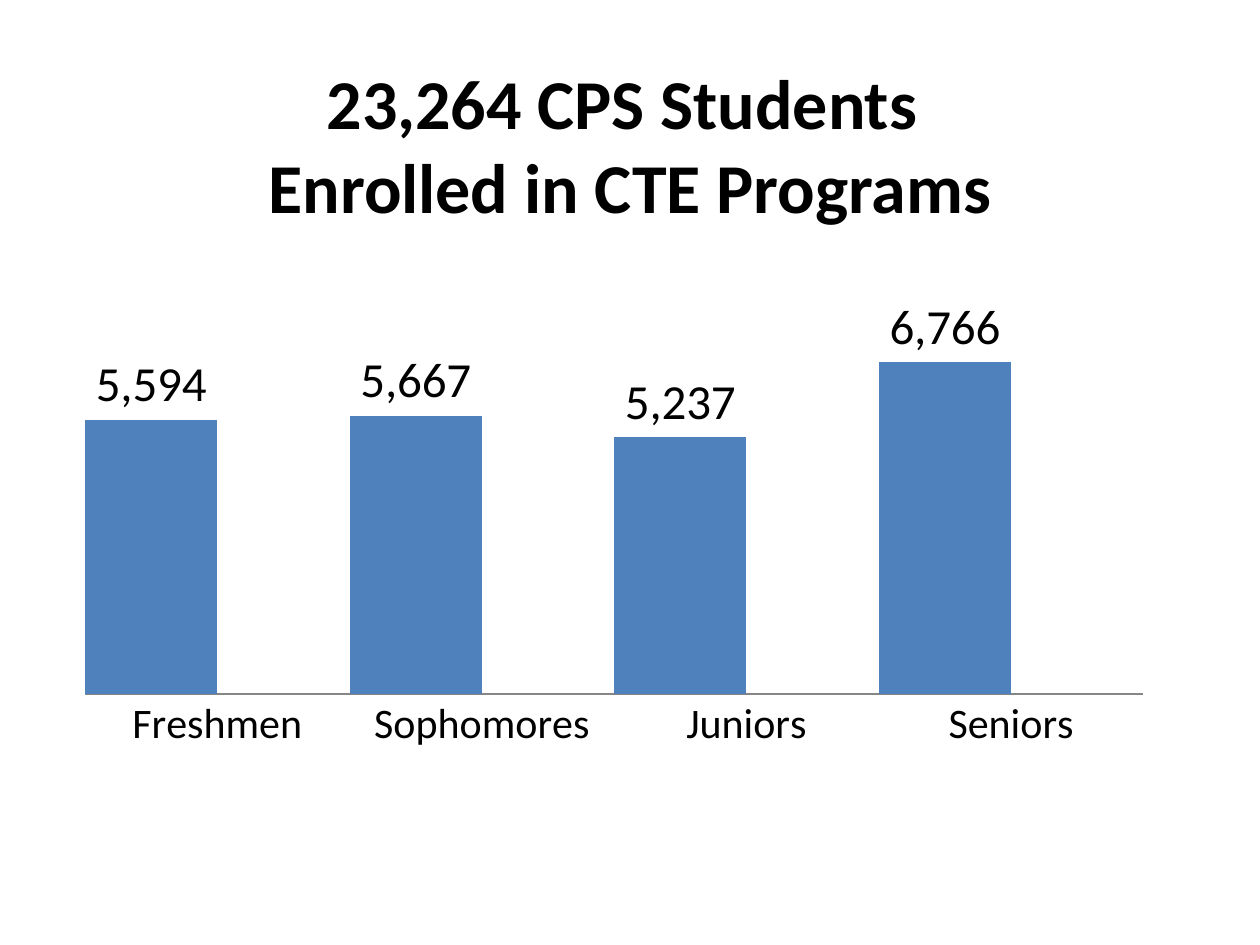
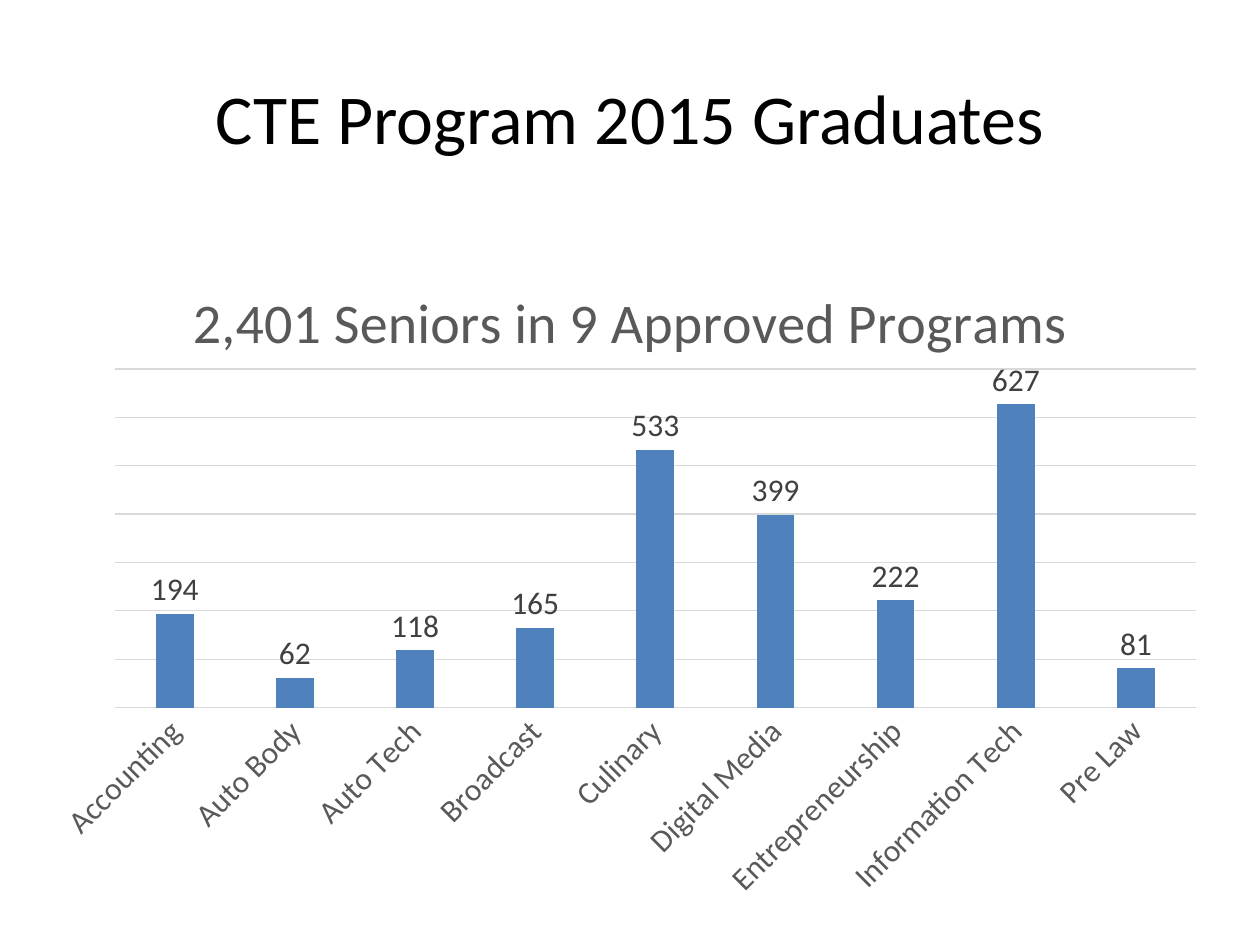
import pptx
import pptx.chart.data
import pptx.dml.color
import pptx.enum.chart
import pptx.enum.text
import pptx.oxml
import pptx.oxml.ns
import pptx.util

FONT = "Calibri"
BLACK, DARK, GREY = "000000", "404040", "595959"
BLUE, RED = "4F81BD", "C0504D"
AXIS, PALE = "868686", "D9D9D9"
COLUMNS, ROWS = 100, 75

prs = pptx.Presentation()
prs.slide_width = pptx.util.Inches(10)
prs.slide_height = pptx.util.Inches(7.5)


def rgb(color):
    return pptx.dml.color.RGBColor.from_string(color)


def grid(column, row, columns, rows):
    """Turn grid cells into left, top, width and height."""
    cell_w, cell_h = prs.slide_width / COLUMNS, prs.slide_height / ROWS
    return [pptx.util.Emu(round(n)) for n in
            (column * cell_w, row * cell_h, columns * cell_w, rows * cell_h)]


def style_font(font, size, color=BLACK, bold=False):
    font.name, font.size, font.bold = FONT, pptx.util.Pt(size), bold
    font.color.rgb = rgb(color)


def write(tf, text, size, **style):
    p = tf.paragraphs[0]
    p.text = text
    p.alignment = pptx.enum.text.PP_ALIGN.CENTER
    for r in p.runs:
        style_font(r.font, size, **style)


def style_line(line, color):
    line.color.rgb = rgb(color)
    line.width = pptx.util.Pt(0.75)


def add_title(s, box, text, bold=False):
    tf = s.shapes.add_textbox(*grid(*box)).text_frame
    tf.word_wrap = True
    tf.vertical_anchor = pptx.enum.text.MSO_ANCHOR.MIDDLE
    write(tf, text, 40, bold=bold)


def set_plot_layout(chart, x, y, w, h):
    """Place the inner plot area by shares of the chart's size."""
    plot_area = chart.element.xpath("c:chart/c:plotArea")[0]
    for layout in plot_area.xpath("c:layout"):
        plot_area.remove(layout)
    shares = "".join(f'<c:{tag} val="{share}"/>'
                     for tag, share in zip("xywh", (x, y, w, h)))
    plot_area.insert(0, pptx.oxml.parse_xml(
        f'<c:layout {pptx.oxml.ns.nsdecls("c")}><c:manualLayout>'
        '<c:layoutTarget val="inner"/><c:xMode val="edge"/><c:yMode val="edge"/>'
        f'{shares}</c:manualLayout></c:layout>'))


def add_column_chart(s, box, categories, series, layout, maximum, step,
                     gap, overlap, axis_size, label_size, axis_color=BLACK,
                     label_color=BLACK, line_color=AXIS, gridlines=False,
                     title=None, rotation=0):
    data = pptx.chart.data.CategoryChartData(number_format="#,##0")
    data.categories = categories
    for name, values, _ in series:
        data.add_series(name, values)
    chart = s.shapes.add_chart(
        pptx.enum.chart.XL_CHART_TYPE.COLUMN_CLUSTERED, *grid(*box), data).chart
    style_font(chart.font, 10)
    chart.has_legend = False
    chart.has_title = title is not None
    if title:
        write(chart.chart_title.text_frame, title, 32, color=GREY)
        chart.chart_title.include_in_layout = False
    set_plot_layout(chart, *layout)

    plot = chart.plots[0]
    plot.vary_by_categories = False
    plot.gap_width, plot.overlap = gap, overlap
    for bars, (_, _, color) in zip(plot.series, series):
        bars.format.fill.solid()
        bars.format.fill.fore_color.rgb = rgb(color)
        bars.invert_if_negative = False
    labels = plot.series[0].data_labels
    labels.show_value = True
    labels.number_format, labels.number_format_is_linked = "#,##0", False
    labels.position = pptx.enum.chart.XL_LABEL_POSITION.OUTSIDE_END
    style_font(labels.font, label_size, label_color)

    axis = chart.category_axis
    axis.major_tick_mark = pptx.enum.chart.XL_TICK_MARK.NONE
    axis.has_major_gridlines = False
    style_line(axis.format.line, line_color)
    style_font(axis.tick_labels.font, axis_size, axis_color)
    body = chart.element.xpath("//c:catAx/c:txPr/a:bodyPr")[0]
    body.set("rot", str(rotation * 60000))

    values_axis = chart.value_axis
    values_axis.minimum_scale, values_axis.maximum_scale = 0, maximum
    values_axis.major_unit = step
    values_axis.has_major_gridlines = gridlines
    if gridlines:
        style_line(values_axis.major_gridlines.format.line, line_color)
    values_axis.visible = False


def enrollment_slide(s):
    add_title(s, (5, 5.1, 90, 12.5),
              "23,264 CPS Students \vEnrolled in CTE Programs", bold=True)
    add_column_chart(
        s, (5, 23.2, 87.5, 37.1),
        ["Freshmen", "Sophomores", "Juniors", "Seniors"],
        [("Series 1", [5594, 5667, 5237, 6766], BLUE),
         ("Series 2", [None] * 4, RED)],
        layout=(0.02, 0.02, 0.96, 0.84), maximum=8000, step=1000,
        gap=0, overlap=0, axis_size=24, label_size=28)


def graduates_slide(s):
    add_title(s, (5, 3, 90, 12.5), "CTE Program 2015 Graduates")
    add_column_chart(
        s, (3.1, 20.1, 93.9, 52.2),
        ["Accounting", "Auto Body", "Auto Tech", "Broadcast", "Culinary",
         "Digital Media", "Entrepreneurship", "Information Tech", "Pre Law"],
        [("Series 1", [194, 62, 118, 165, 533, 399, 222, 627, 81], BLUE)],
        layout=(0.064, 0.176, 0.914, 0.515), maximum=700, step=100,
        gap=219, overlap=-27, axis_size=18, label_size=18, axis_color=GREY,
        label_color=DARK, line_color=PALE, gridlines=True,
        title="2,401 Seniors in 9 Approved Programs", rotation=-45)


def main():
    blank = prs.slide_layouts[6]
    for build in (enrollment_slide, graduates_slide):
        build(prs.slides.add_slide(blank))
    prs.save("out.pptx")


if __name__ == "__main__":
    main()
